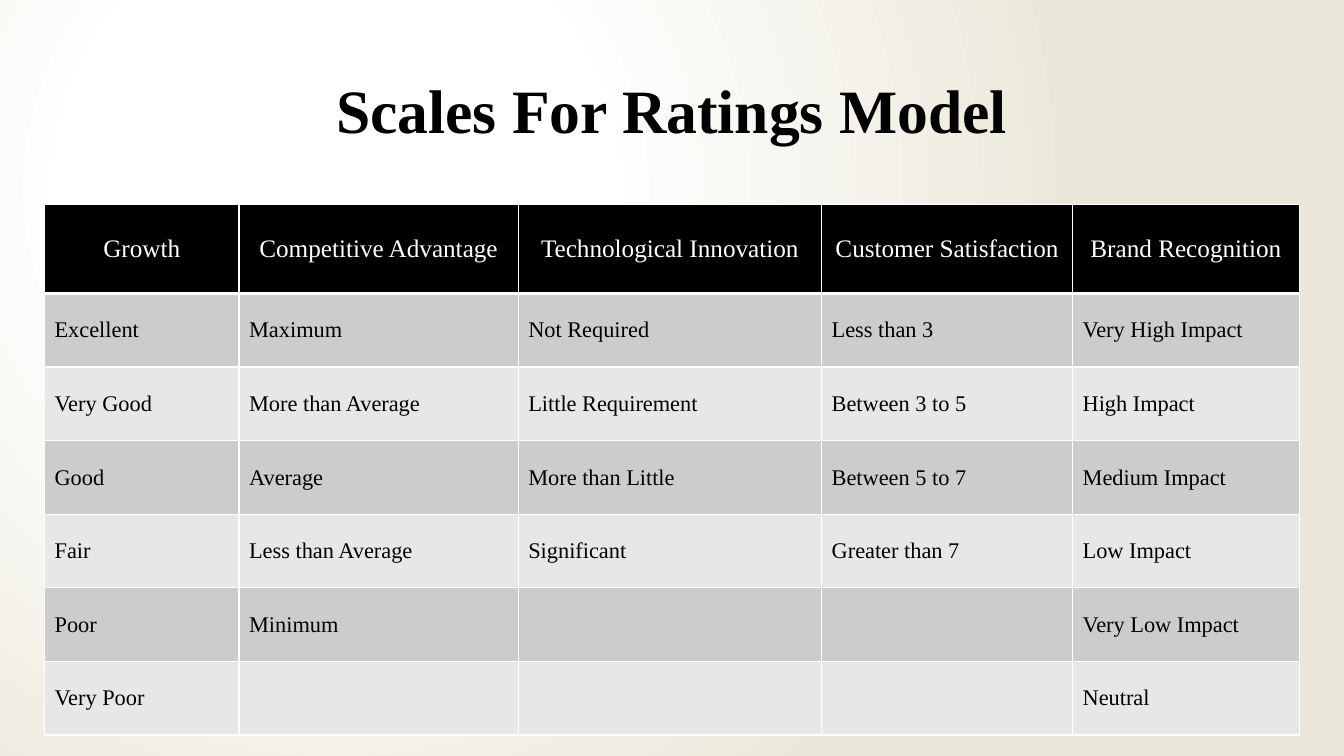
from dataclasses import dataclass

from lxml.etree import SubElement
from pptx import Presentation
from pptx.dml.color import RGBColor
from pptx.enum.text import MSO_ANCHOR, PP_ALIGN
from pptx.oxml.ns import qn
from pptx.util import Pt

TITLE = "Scales For Ratings Model"
ROWS = [
    ("Growth", "Competitive Advantage", "Technological Innovation",
     "Customer Satisfaction", "Brand Recognition"),
    ("Excellent", "Maximum", "Not Required", "Less than 3", "Very High Impact"),
    ("Very Good", "More than Average", "Little Requirement", "Between 3 to 5",
     "High Impact"),
    ("Good", "Average", "More than Little", "Between 5 to 7", "Medium Impact"),
    ("Fair", "Less than Average", "Significant", "Greater than 7", "Low Impact"),
    ("Poor", "Minimum", "", "", "Very Low Impact"),
    ("Very Poor", "", "", "", "Neutral"),
]


@dataclass(frozen=True)
class Theme:
    font: str = "Times New Roman"
    black: str = "000000"
    white: str = "FFFFFF"
    cream: str = "EAE7D8"
    bands: tuple = ("E7E7E7", "CCCCCC")
    title: int = 44
    head: int = 18
    body: int = 16


THEME = Theme()
WIDTHS = (138.96, 199.44, 216.72, 179.28, 162)
HEAD_H, ROW_H = 63.36, 52.56
LEFT, TOP = 31.8, 146.3


def style(para, size, color, bold=False):
    for run in para.runs:
        font = run.font
        font.name, font.size, font.bold = THEME.font, Pt(size), bold
        font.color.rgb = RGBColor.from_string(color)


def paint(slide):
    """Fill the background with a circular gradient centred up and left."""
    fill = slide.background.fill
    fill.gradient()
    for stop, color, place in zip(fill.gradient_stops,
                                  (THEME.white, THEME.cream), (0.34, 1)):
        stop.color.rgb = RGBColor.from_string(color)
        stop.position = place
    grad = slide.element.find(".//" + qn("a:gradFill"))
    grad.remove(grad.find(qn("a:lin")))
    circle = SubElement(grad, qn("a:path"), path="circle")
    SubElement(circle, qn("a:fillToRect"),
               l="50000", t="50000", r="100000", b="100000")


def edge(cell, side, width):
    line = SubElement(cell._tc.get_or_add_tcPr(), qn("a:ln" + side),
                      w=str(Pt(width)))
    fill = SubElement(line, qn("a:solidFill"))
    SubElement(fill, qn("a:srgbClr"), val=THEME.white)


def set_cell(cell, text, row):
    head = row == 0
    thick = {(0, "B"), (1, "T")}
    for side in "LRTB":
        edge(cell, side, 3 if (row, side) in thick else 1)
    cell.fill.solid()
    cell.fill.fore_color.rgb = RGBColor.from_string(
        THEME.black if head else THEME.bands[row % 2])
    cell.vertical_anchor = MSO_ANCHOR.MIDDLE
    cell.text_frame.text = text
    para = cell.text_frame.paragraphs[0]
    para.alignment = PP_ALIGN.CENTER if head else PP_ALIGN.LEFT
    style(para, THEME.head if head else THEME.body,
          THEME.white if head else THEME.black)


def add_title(slide):
    title = slide.shapes.title
    title.left, title.top = Pt(66), Pt(28.8)
    title.width, title.height = Pt(828), Pt(104.4)
    frame = title.text_frame
    frame.text = TITLE
    frame.vertical_anchor = MSO_ANCHOR.MIDDLE
    para = frame.paragraphs[0]
    para.alignment, para.line_spacing = PP_ALIGN.CENTER, 0.9
    style(para, THEME.title, THEME.black, True)


def add_grid(slide):
    heights = [HEAD_H] + [ROW_H] * (len(ROWS) - 1)
    table = slide.shapes.add_table(
        len(ROWS), len(WIDTHS), Pt(LEFT), Pt(TOP),
        Pt(sum(WIDTHS)), Pt(sum(heights))).table
    for col, width in zip(table.columns, WIDTHS):
        col.width = Pt(width)
    for r, (texts, height) in enumerate(zip(ROWS, heights)):
        table.rows[r].height = Pt(height)
        for c, text in enumerate(texts):
            set_cell(table.cell(r, c), text, r)


def main():
    deck = Presentation()
    deck.slide_width, deck.slide_height = Pt(960), Pt(540)
    slide = deck.slides.add_slide(deck.slide_layouts[5])
    paint(slide)
    add_title(slide)
    add_grid(slide)
    deck.save("out.pptx")


if __name__ == "__main__":
    main()
